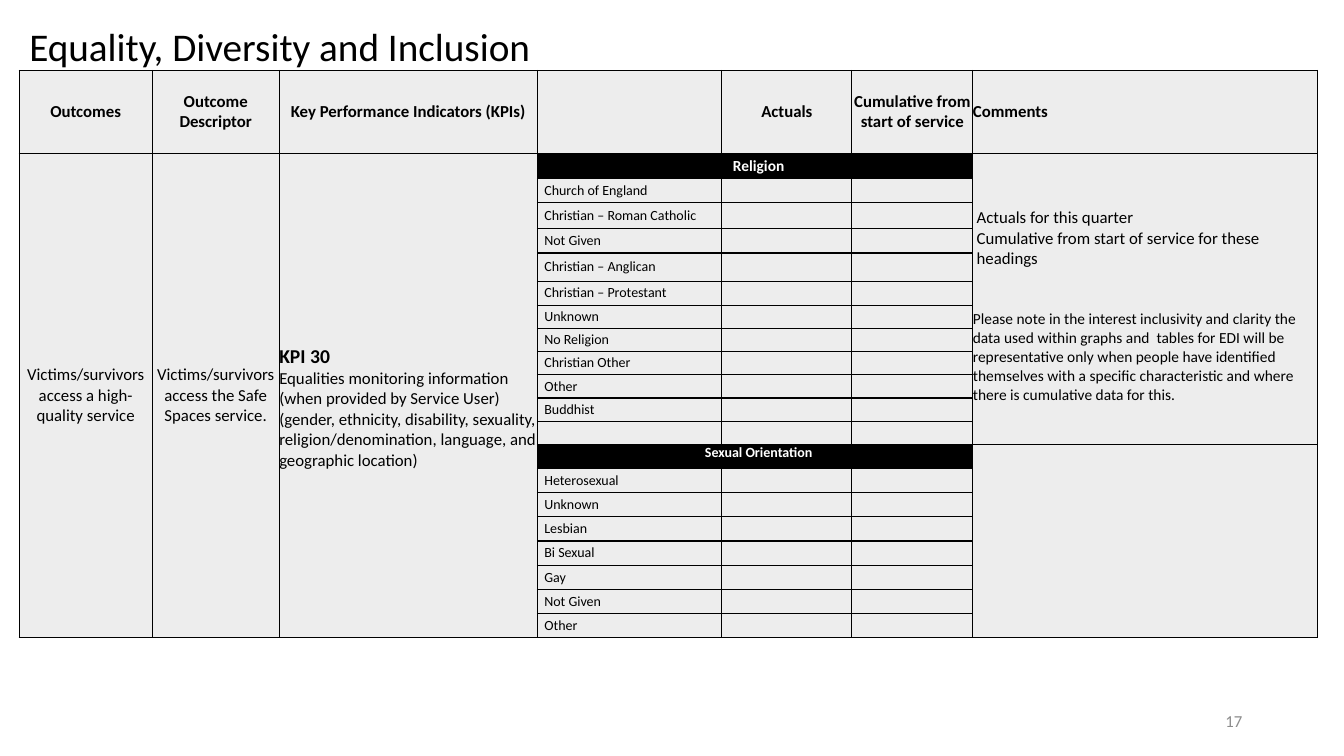
"""Build the Equality, Diversity and Inclusion reporting slide."""
from dataclasses import dataclass

from lxml import etree
from pptx import Presentation
from pptx.dml.color import RGBColor
from pptx.enum.text import MSO_ANCHOR, MSO_AUTO_SIZE, PP_ALIGN
from pptx.oxml.ns import qn
from pptx.table import Table, _Cell
from pptx.text.text import _Paragraph
from pptx.util import Inches, Pt

LEFT, CENTER, RIGHT = PP_ALIGN.LEFT, PP_ALIGN.CENTER, PP_ALIGN.RIGHT
TOP, MIDDLE, BOTTOM = MSO_ANCHOR.TOP, MSO_ANCHOR.MIDDLE, MSO_ANCHOR.BOTTOM
NO_AUTOFIT = MSO_AUTO_SIZE.NONE
FONT = "Calibri"
COLOURS = {"ink": "000000", "paper": "FFFFFF", "cell": "EDEDED", "number": "8C8C8C"}

COLUMN_WIDTHS = [1.32, 1.26, 2.56, 1.83, 1.29, 1.2, 3.42]
ROW_HEIGHTS = [0.82, 0.25, 0.24, 0.26, 0.24, 0.28, 0.24] + [0.23] * 6 + [0.24] * 8
HEADERS = ["Outcomes", "Outcome Descriptor", "Key Performance Indicators (KPIs)", "",
           "Actuals", "Cumulative from start of service", "Comments"]
RELIGIONS = ["Church of England", "Christian – Roman Catholic", "Not Given",
             "Christian – Anglican", "Christian – Protestant", "Unknown", "No Religion",
             "Christian Other", "Other", "Buddhist"]
ORIENTATIONS = ["Heterosexual", "Unknown", "Lesbian", "Bi Sexual", "Gay", "Not Given", "Other"]
RELIGION_ROW, ORIENTATION_ROW, LAST_ROW = 1, 13, 20
CATEGORY_COLUMN, CUMULATIVE_COLUMN, COMMENT_COLUMN = 3, 5, 6


@dataclass
class Line:
    """One paragraph and its look."""
    text: str
    size: float = 12
    bold: bool = False
    align: PP_ALIGN = LEFT
    colour: str = "ink"
    space_before: float = 0


@dataclass
class Entry:
    """The content of one cell, which may span down to another cell."""
    row: int
    column: int
    lines: list[Line]
    last_row: int = 0
    last_column: int = 0
    anchor: MSO_ANCHOR = MIDDLE
    margins: tuple[float, float, float, float] = (0, 0, 0, 0)
    fill: str = "cell"


def rgb(name: str) -> RGBColor:
    """Return a named colour."""
    return RGBColor.from_string(COLOURS[name])


def write_line(paragraph: _Paragraph, line: Line) -> None:
    """Write and format one paragraph."""
    paragraph.text = line.text
    paragraph.alignment = line.align
    paragraph.space_before = Pt(line.space_before)
    for run in paragraph.runs:
        run.font.name = FONT
        run.font.size = Pt(line.size)
        run.font.bold = line.bold
        run.font.color.rgb = rgb(line.colour)


def prepare_cell(cell: _Cell) -> None:
    """Give a cell borders, fill, no margins and a small empty line."""
    properties = cell._tc.get_or_add_tcPr()
    for side in ("a:lnL", "a:lnR", "a:lnT", "a:lnB"):
        border = etree.SubElement(properties, qn(side), w=str(Pt(1)))
        solid = etree.SubElement(border, qn("a:solidFill"))
        etree.SubElement(solid, qn("a:srgbClr"), val=COLOURS["ink"])
    cell.fill.solid()
    cell.fill.fore_color.rgb = rgb("cell")
    cell.margin_left = cell.margin_top = cell.margin_right = cell.margin_bottom = 0
    paragraph = cell.text_frame.paragraphs[0]
    etree.SubElement(paragraph._p, qn("a:endParaRPr"), sz="1000")


def fill_entry(table: Table, entry: Entry) -> None:
    """Merge, colour and write one table entry."""
    cell = table.cell(entry.row, entry.column)
    if entry.last_row or entry.last_column:
        cell.merge(table.cell(entry.last_row or entry.row, entry.last_column or entry.column))
    cell.fill.solid()
    cell.fill.fore_color.rgb = rgb(entry.fill)
    cell.vertical_anchor = entry.anchor
    left, top, right, bottom = entry.margins
    cell.margin_left, cell.margin_top = Inches(left), Inches(top)
    cell.margin_right, cell.margin_bottom = Inches(right), Inches(bottom)
    for index, line in enumerate(entry.lines):
        frame = cell.text_frame
        write_line(frame.paragraphs[0] if index == 0 else frame.add_paragraph(), line)


def category_entries(heading_row: int, heading: Line, anchor: MSO_ANCHOR,
                     categories: list[str]) -> list[Entry]:
    """Return a black heading and the categories below it."""
    margins = (0.07, 0, 0, 0)
    band = Entry(heading_row, CATEGORY_COLUMN, [heading], last_column=CUMULATIVE_COLUMN,
                 anchor=anchor, margins=margins, fill="ink")
    return [band] + [Entry(row, CATEGORY_COLUMN, [Line(name, 10)], margins=margins)
                     for row, name in enumerate(categories, heading_row + 1)]


def table_entries() -> list[Entry]:
    """Return all the written cells of the table."""
    entries = [Entry(0, column, [Line(text, 12, True, LEFT if column == COMMENT_COLUMN else CENTER)])
               for column, text in enumerate(HEADERS) if text]
    entries += [
        Entry(1, 0, [Line("Victims/survivors access a high-quality service", align=CENTER)], LAST_ROW),
        Entry(1, 1, [Line("Victims/survivors access the Safe Spaces service.", align=CENTER)], LAST_ROW),
        Entry(1, 2, [
            Line("KPI 30", 14, True),
            Line("Equalities monitoring information (when provided by Service User) (gender, "
                 "ethnicity, disability, sexuality, religion/denomination, language, and "
                 "geographic location)"),
        ], LAST_ROW, margins=(0, 0.24, 0, 0)),
        Entry(1, COMMENT_COLUMN, [
            Line(" Actuals for this quarter"),
            Line(" Cumulative from start of service for these"),
            Line(" headings"),
            Line("Please note in the interest inclusivity and clarity the data used within graphs "
                 "and  tables for EDI will be representative only when people have identified "
                 "themselves with a specific characteristic and where there is cumulative data "
                 "for this.", 11, space_before=29),
        ], ORIENTATION_ROW - 1, anchor=BOTTOM, margins=(0, 0, 0, 0.39)),
        Entry(ORIENTATION_ROW, COMMENT_COLUMN, [], LAST_ROW),
    ]
    entries += category_entries(RELIGION_ROW, Line("Religion", 11, True, CENTER, "paper"),
                                MIDDLE, RELIGIONS)
    entries += category_entries(ORIENTATION_ROW, Line("Sexual Orientation", 10, True, CENTER, "paper"),
                                TOP, ORIENTATIONS)
    return entries


def main() -> None:
    """Build and save the presentation."""
    presentation = Presentation()
    presentation.slide_width, presentation.slide_height = Inches(13.33), Inches(7.5)
    slide = presentation.slides.add_slide(presentation.slide_layouts[5])

    title = slide.shapes.title
    title.left, title.top = Inches(0.19), Inches(0.17)
    title.width, title.height = Inches(5.23), Inches(0.57)
    title.text_frame.auto_size = NO_AUTOFIT
    title.text_frame.word_wrap = False
    title.text_frame.vertical_anchor = TOP
    write_line(title.text_frame.paragraphs[0], Line("Equality, Diversity and Inclusion", 28))

    frame = slide.shapes.add_table(len(ROW_HEIGHTS), len(COLUMN_WIDTHS), Inches(0.19), Inches(0.7),
                                   Inches(sum(COLUMN_WIDTHS)), Inches(sum(ROW_HEIGHTS)))
    table = frame.table
    table.first_row = table.horz_banding = False
    for column, width in zip(table.columns, COLUMN_WIDTHS):
        column.width = Inches(width)
    for row, height in zip(table.rows, ROW_HEIGHTS):
        row.height = Inches(height)
    for cell in table.iter_cells():
        prepare_cell(cell)
    for entry in table_entries():
        fill_entry(table, entry)

    number = slide.shapes.add_textbox(Inches(9.42), Inches(6.95), Inches(3), Inches(0.4))
    number.text_frame.word_wrap = True
    number.text_frame.vertical_anchor = MIDDLE
    write_line(number.text_frame.paragraphs[0], Line("17", align=RIGHT, colour="number"))

    presentation.save("out.pptx")


if __name__ == "__main__":
    main()
